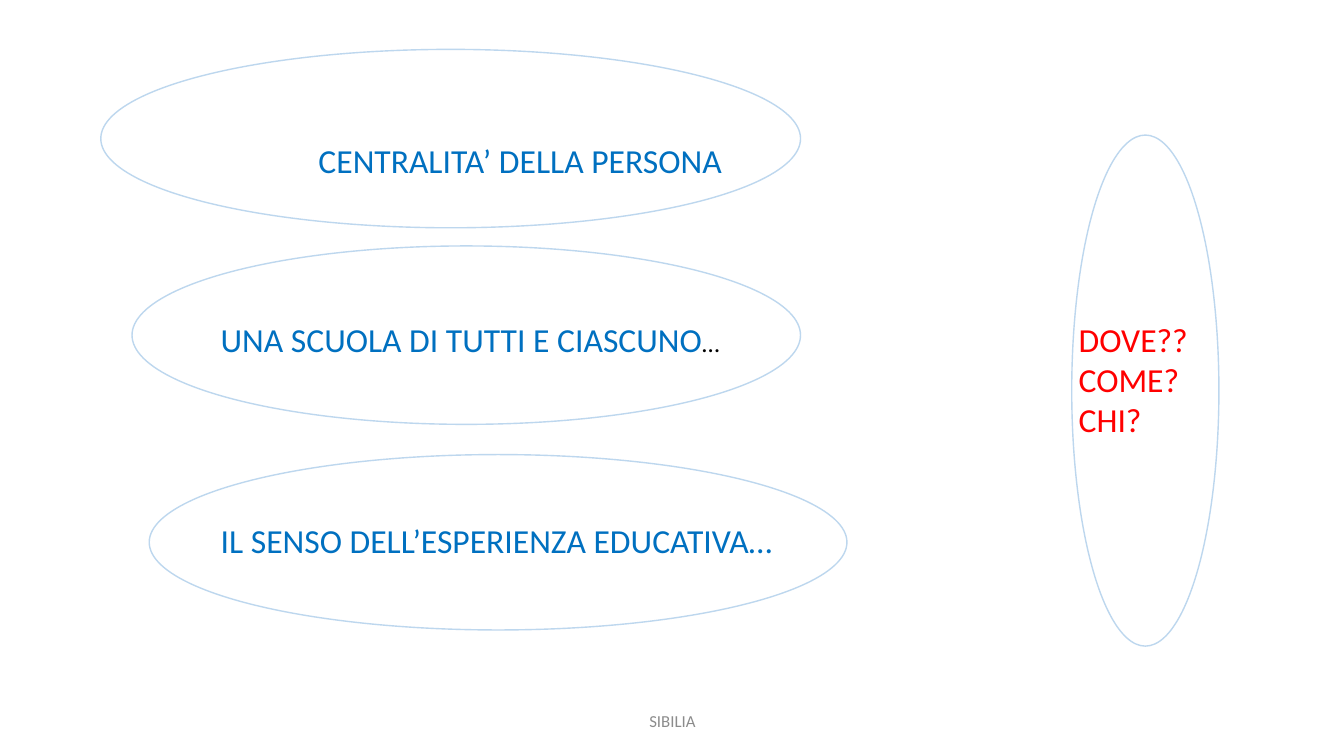
from dataclasses import dataclass

from pptx import Presentation
from pptx.dml.color import RGBColor
from pptx.enum.shapes import MSO_SHAPE
from pptx.enum.text import MSO_ANCHOR, PP_ALIGN
from pptx.util import Inches, Pt


@dataclass(frozen=True)
class Theme:
    font: str = "Calibri"
    outline: str = "BDD7EE"
    principle: str = "0070C0"
    question: str = "FF0000"
    ellipsis: str = "000000"
    footer: str = "8C8C8C"
    body_size: int = 24
    ellipsis_size: int = 18
    footer_size: int = 12
    outline_width: int = 1


THEME = Theme()

# Ellipse box, text box, wording, smaller closing text
PRINCIPLES = [
    ((1, 0.49, 6.94, 1.77), (3.06, 1.34, 4.59, 0.5),
     "CENTRALITA’ DELLA PERSONA", ""),
    ((1.31, 2.44, 6.63, 1.77), (2.09, 3.11, 5.85, 0.5),
     "UNA SCUOLA DI TUTTI E CIASCUNO", "…"),
    ((1.48, 4.51, 6.92, 1.74), (2.09, 5.11, 5.85, 0.5),
     "IL SENSO DELL’ESPERIENZA EDUCATIVA…", ""),
]
QUESTIONS = ["DOVE??", "COME?", "CHI?"]


def add_ellipse(slide, box):
    ellipse = slide.shapes.add_shape(MSO_SHAPE.OVAL, *map(Inches, box))
    ellipse.shadow.inherit = False
    ellipse.fill.background()
    ellipse.line.color.rgb = RGBColor.from_string(THEME.outline)
    ellipse.line.width = Pt(THEME.outline_width)


def add_run(paragraph, text, size, color):
    run = paragraph.add_run()
    run.text = text
    run.font.name = THEME.font
    run.font.size = Pt(size)
    run.font.color.rgb = RGBColor.from_string(color)


def add_text(slide, box, lines, *, color, size=THEME.body_size,
             align=PP_ALIGN.LEFT, anchor=MSO_ANCHOR.TOP):
    """Write one paragraph per line and return the last paragraph."""
    frame = slide.shapes.add_textbox(*map(Inches, box)).text_frame
    frame.word_wrap = True
    frame.vertical_anchor = anchor
    for index, line in enumerate(lines):
        paragraph = frame.add_paragraph() if index else frame.paragraphs[0]
        paragraph.alignment = align
        add_run(paragraph, line, size, color)
    return paragraph


def main():
    deck = Presentation()
    deck.slide_width, deck.slide_height = Inches(13.33), Inches(7.5)
    slide = deck.slides.add_slide(deck.slide_layouts[6])

    for ellipse_box, text_box, wording, closing in PRINCIPLES:
        add_ellipse(slide, ellipse_box)
        principle = add_text(slide, text_box, [wording], color=THEME.principle)
        if closing:
            add_run(principle, closing, THEME.ellipsis_size, THEME.ellipsis)

    add_ellipse(slide, (10.63, 1.34, 1.46, 5.07))
    add_text(slide, (10.6, 3.11, 1.49, 1.31), QUESTIONS, color=THEME.question)

    add_text(slide, (4.42, 6.95, 4.5, 0.4), ["SIBILIA"], color=THEME.footer,
             size=THEME.footer_size, align=PP_ALIGN.CENTER,
             anchor=MSO_ANCHOR.MIDDLE)
    deck.save("out.pptx")


if __name__ == "__main__":
    main()
